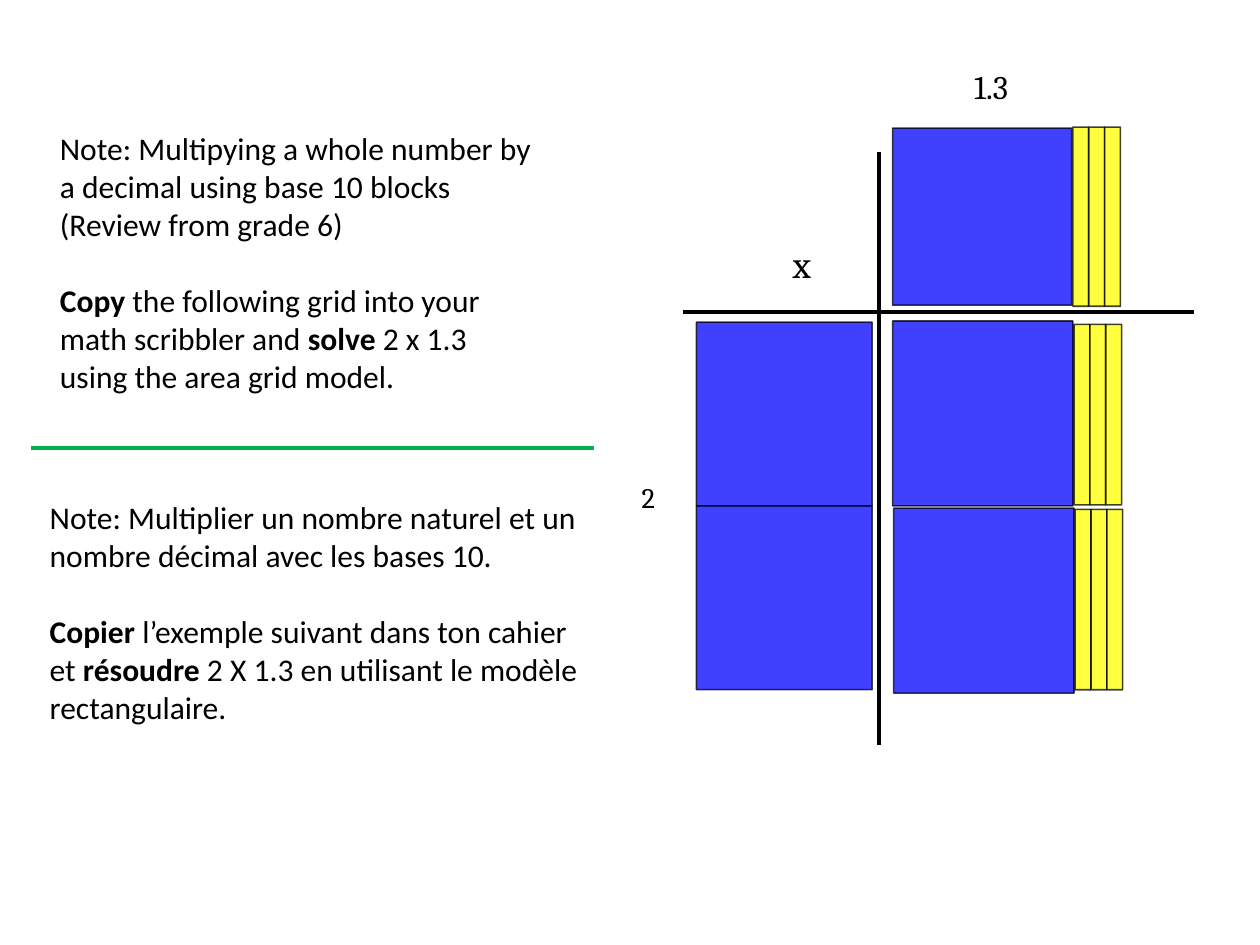
from lxml import etree
from pptx import Presentation
from pptx import util as u
from pptx.dml.color import RGBColor
from pptx.enum import shapes, text
from pptx.oxml import ns

BLACK, BLUE, YELLOW, GREEN = "000000", "0000FF", "FFFF00", "00B050"


def color(code):
    """Turn a hex string into a colour."""
    return RGBColor.from_string(code)


def write(slide, box, paras, font="Calibri", size=20, gaps=()):
    """Add a text box of (text, bold) runs, with a line's gap before some paragraphs."""
    frame = slide.shapes.add_textbox(*map(u.Inches, box)).text_frame
    frame.word_wrap = True
    frame.auto_size = text.MSO_AUTO_SIZE.SHAPE_TO_FIT_TEXT
    for i, runs in enumerate(paras):
        para = frame.paragraphs[0] if i == 0 else frame.add_paragraph()
        para.space_before = u.Pt(size * 1.22 if i in gaps else 0)
        for words, bold in runs:
            run = para.add_run()
            run.text = words
            run.font.name, run.font.size, run.font.bold = font, u.Pt(size), bold
            run.font.color.rgb = color(BLACK)


def rule(slide, x1, y1, x2, y2, code=BLACK):
    """Draw a thick straight line."""
    line = slide.shapes.add_connector(
        shapes.MSO_CONNECTOR.STRAIGHT, *map(u.Inches, (x1, y1, x2, y2)))
    line.line.color.rgb, line.line.width = color(code), u.Pt(3)
    etree.SubElement(line._element.spPr, ns.qn("a:effectLst"))


def block(slide, box, code):
    """Draw one see-through base 10 block."""
    rect = slide.shapes.add_shape(shapes.MSO_SHAPE.RECTANGLE, *map(u.Inches, box))
    rect.shadow.inherit = False
    rect.fill.solid()
    rect.fill.fore_color.rgb = color(code)
    rect.line.color.rgb, rect.line.width = color(BLACK), u.Pt(1)
    for tint in rect._element.spPr.iter(ns.qn("a:srgbClr")):
        etree.SubElement(tint, ns.qn("a:alpha"), val="75000")


def tenths(slide, box, top, tall, count=3):
    """Draw a whole block in the box and a run of tenths at its right."""
    x, y, w, h = box
    block(slide, box, BLUE)
    for i in range(count):
        block(slide, (x + w + 0.01 + i * 0.14, top, 0.14, tall), YELLOW)


def grid(slide, x, y):
    """Draw the area grid whose axes cross at the given point."""
    rule(slide, x - 1.73, y, x + 2.78, y)
    rule(slide, x, y - 1.41, x, y + 3.82)
    tenths(slide, (x + 0.12, y - 1.62, 1.58, 1.56), y - 1.63, 1.58)
    for i in range(2):
        block(slide, (x - 1.61, y + 0.09 + i * 1.62, 1.55, 1.62), BLUE)
        tenths(slide, (x + 0.12 + i * 0.01, y + 0.08 + i * 1.65, 1.59, 1.63),
               y + 0.11 + i * 1.63, 1.59)
    labels = [("x", 24, -0.86, -0.68, 0.97, 0.5),
              ("1.3", 21, 0.74, -2.21, 1.22, 0.45),
              ("2", 18, -2.19, 1.43, 0.78, 0.4)]
    for words, size, dx, dy, w, h in labels:
        write(slide, (x + dx, y + dy, w, h), [[(words, False)]], font="Cambria", size=size)


def notes(slide, x, y):
    """Place the English and French notes either side of a green rule."""
    write(slide, (x + 0.16, y, 4.44, 2.46), [
        [("Note: Multipying a whole number by a decimal using base 10 blocks "
          "(Review from grade 6)", False)],
        [("Copy", True), (" the following grid into your math scribbler and ", False),
         ("solve", True), (" 2 x 1.3 using the area grid model.", False)],
    ], gaps=(1,))
    rule(slide, x, y + 2.86, x + 4.97, y + 2.86, GREEN)
    write(slide, (x + 0.07, y + 3.25, 5.56, 2.12), [
        [("Note: Multiplier un nombre naturel et un nombre décimal avec les bases 10.",
          False)],
        [("Copier ", True), ("l’exemple suivant dans ton cahier", False)],
        [("et ", False), ("résoudre", True),
         (" 2 X 1.3 en utilisant le modèle rectangulaire.", False)],
    ], gaps=(1,))


def main():
    """Build the slide and save it."""
    deck = Presentation()
    deck.slide_width, deck.slide_height = u.Inches(11.11), u.Inches(8.33)
    slide = deck.slides.add_slide(deck.slide_layouts[6])
    notes(slide, 0.27, 1.09)
    grid(slide, 7.75, 2.75)
    deck.save("out.pptx")


if __name__ == "__main__":
    main()
